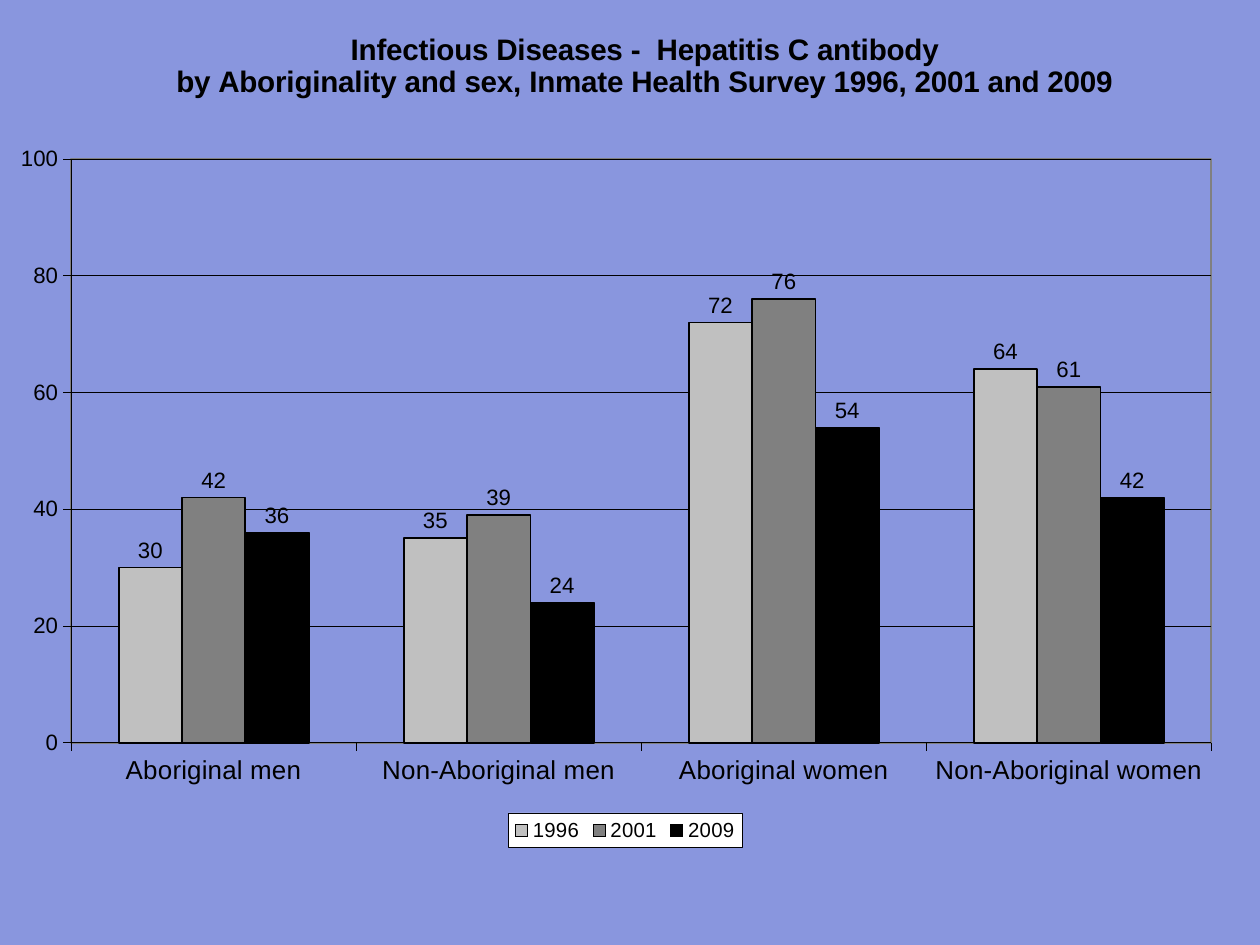
from pptx import Presentation
from pptx.chart.data import CategoryChartData
from pptx.dml.color import RGBColor
from pptx.enum.chart import (XL_CHART_TYPE, XL_LABEL_POSITION,
                             XL_LEGEND_POSITION, XL_TICK_MARK)
from pptx.oxml import parse_xml
from pptx.oxml.ns import nsdecls, qn
from pptx.util import Pt

BARS = XL_CHART_TYPE.COLUMN_CLUSTERED
ABOVE = XL_LABEL_POSITION.OUTSIDE_END
BOTTOM = XL_LEGEND_POSITION.BOTTOM
OUT = XL_TICK_MARK.OUTSIDE
NONE = XL_TICK_MARK.NONE

PX = 6858
LEFT, TOP, WIDTH, HEIGHT = 0, 21, 1249, 827
INK = "000000"
TITLE = ("Infectious Diseases -  Hepatitis C antibody\n"
         "by Aboriginality and sex, Inmate Health Survey 1996, 2001 and 2009")
GROUPS = ["Aboriginal men", "Non-Aboriginal men",
          "Aboriginal women", "Non-Aboriginal women"]
YEARS = [
    ("1996", (30, 35, 72, 64), "C0C0C0"),
    ("2001", (42, 39, 76, 61), "808080"),
    ("2009", (36, 24, 54, 42), INK),
]


def px(n):
    return n * PX


def color(code):
    return RGBColor.from_string(code)


def style(font, size, bold=False):
    font.name = "Arial"
    font.size = Pt(size)
    font.bold = bold
    font.color.rgb = color(INK)


def stroke(line, width):
    line.color.rgb = color(INK)
    line.width = Pt(width)


def place(part, x, y, w=None, h=None, inner=False):
    old = part.find(qn("c:layout"))
    if old is not None:
        part.remove(old)
    marks = [("xMode", "edge"), ("yMode", "edge"),
             ("x", round((x - LEFT) / WIDTH, 3)),
             ("y", round((y - TOP) / HEIGHT, 3))]
    if inner:
        marks.insert(0, ("layoutTarget", "inner"))
    if w:
        marks += [("w", round(w / WIDTH, 3)), ("h", round(h / HEIGHT, 3))]
    body = "".join(f'<c:{tag} val="{val}"/>' for tag, val in marks)
    node = parse_xml(f'<c:layout {nsdecls("c")}><c:manualLayout>{body}'
                     '</c:manualLayout></c:layout>')
    part.insert(0 if inner else 1, node)


def frame(fill=None, edge=None, width=0):
    def paint(code):
        if code is None:
            return "<a:noFill/>"
        return f'<a:solidFill><a:srgbClr val="{code}"/></a:solidFill>'
    return parse_xml(f'<c:spPr {nsdecls("c", "a")}>{paint(fill)}'
                     f'<a:ln w="{Pt(width)}">{paint(edge)}</a:ln></c:spPr>')


def add_bars(slide):
    data = CategoryChartData()
    data.categories = GROUPS
    for year, vals, _ in YEARS:
        data.add_series(year, vals)
    chart = slide.shapes.add_chart(
        BARS, px(LEFT), px(TOP), px(WIDTH), px(HEIGHT), data).chart
    style(chart.font, 12)
    chart.font._element.getparent()
    root = chart._chartSpace
    root.find(qn("c:txPr")).addprevious(frame())
    area = root.chart.plotArea
    place(area, 71, 159, 1140, 584, inner=True)
    area.append(frame(edge="808080", width=1))

    plot = chart.plots[0]
    plot.gap_width = 150
    plot.overlap = 0
    plot.vary_by_categories = False
    for bars, (_, _, code) in zip(plot.series, YEARS):
        bars.format.fill.solid()
        bars.format.fill.fore_color.rgb = color(code)
        stroke(bars.format.line, 1)
        bars.invert_if_negative = False
    plot.has_data_labels = True
    tags = plot.data_labels
    tags.show_value = True
    tags.position = ABOVE
    style(tags.font, 12)
    return chart


def set_axes(chart):
    for axis, size in ((chart.category_axis, 14), (chart.value_axis, 12)):
        style(axis.tick_labels.font, size)
        stroke(axis.format.line, 0.25)
        axis.major_tick_mark = OUT
        axis.minor_tick_mark = NONE
    scale = chart.value_axis
    scale.minimum_scale = 0
    scale.maximum_scale = 100
    scale.major_unit = 20
    scale.has_major_gridlines = True
    stroke(scale.major_gridlines.format.line, 0.25)


def set_title(chart):
    chart.has_title = True
    title = chart.chart_title
    title.include_in_layout = False
    title.text_frame.text = TITLE
    for para in title.text_frame.paragraphs:
        style(para.font, 16, True)
    place(title._element, 172, 28)


def set_legend(chart):
    chart.has_legend = True
    legend = chart.legend
    legend.position = BOTTOM
    legend.include_in_layout = False
    style(legend.font, 11)
    part = legend._element
    place(part, 508, 813, 233, 35)
    part.find(qn("c:txPr")).addprevious(frame("FFFFFF", INK, 0.25))


def main():
    deck = Presentation()
    deck.slide_width = px(1260)
    deck.slide_height = px(945)
    slide = deck.slides.add_slide(deck.slide_layouts[6])
    back = slide.background.fill
    back.solid()
    back.fore_color.rgb = color("8996DE")
    chart = add_bars(slide)
    set_axes(chart)
    set_title(chart)
    set_legend(chart)
    deck.save("out.pptx")


if __name__ == "__main__":
    main()
